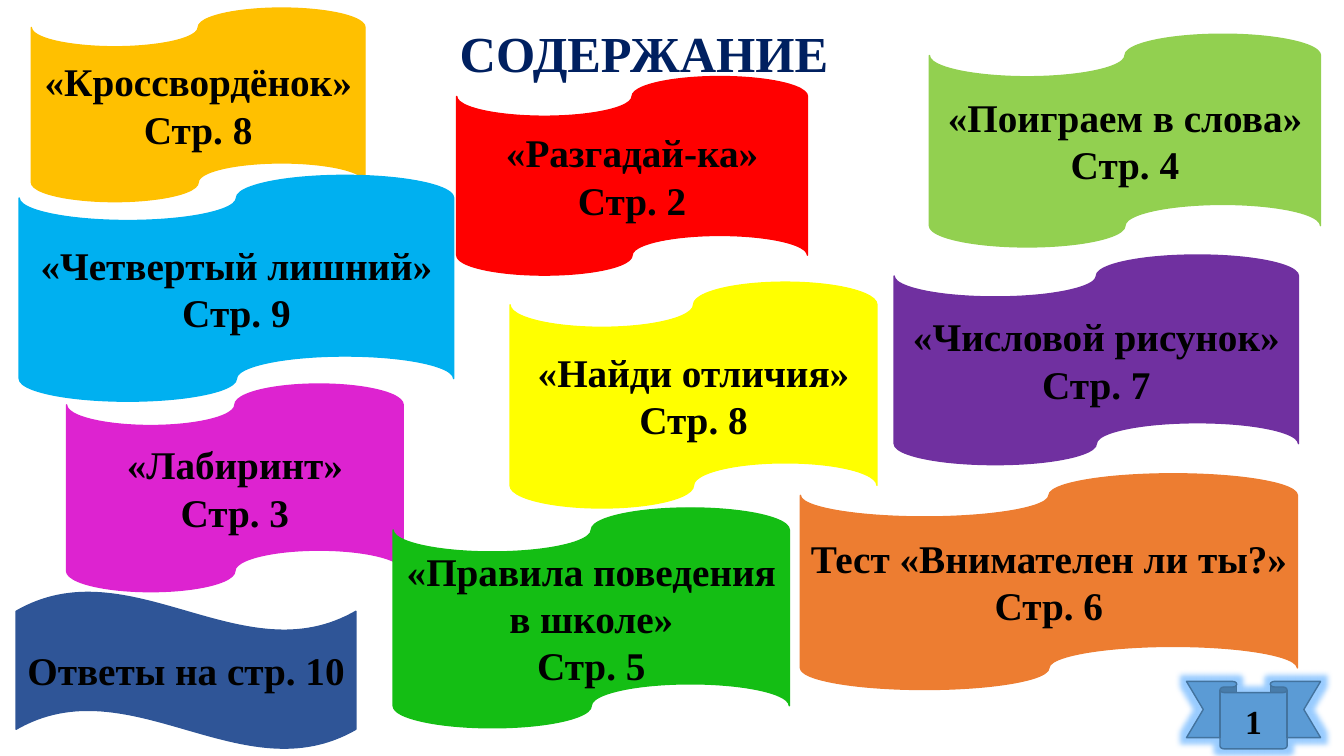
from dataclasses import dataclass

import pptx
import pptx.dml.color
import pptx.enum.shapes
import pptx.enum.text
import pptx.oxml
import pptx.oxml.ns
import pptx.presentation
import pptx.shapes.autoshape
import pptx.shapes.base
import pptx.slide
import pptx.text.text
import pptx.util

SHAPE = pptx.enum.shapes.MSO_SHAPE
ALIGN = pptx.enum.text.PP_ALIGN
ANCHOR = pptx.enum.text.MSO_ANCHOR


@dataclass(frozen=True)
class Theme:
    font: str = "Times New Roman"
    title_size: int = 36
    banner_size: int = 28
    page_size: int = 24
    line_width: int = 1
    glow_radius: int = 8
    text: str = "000000"
    title: str = "002060"
    amber: str = "FFC000"
    red: str = "FF0000"
    lime: str = "92D050"
    magenta: str = "DD23D0"
    green: str = "14BE14"
    orange: str = "ED7D31"
    purple: str = "7030A0"
    yellow: str = "FFFF00"
    sky: str = "00B0F0"
    navy: str = "2F5597"
    ribbon: str = "5B9BD5"
    ribbon_edge: str = "43739E"
    glow: str = "99CCFF"


THEME = Theme()


@dataclass(frozen=True)
class Area:
    """A rectangle in percent of the slide's width and height."""
    left: float
    top: float
    width: float
    height: float


@dataclass(frozen=True)
class Banner:
    text: str
    area: Area
    color: str
    preset: SHAPE = SHAPE.FLOWCHART_PUNCHED_TAPE


TITLE_AREA = Area(33.45, 2.27, 30.3, 9.47)
PAGE_AREA = Area(88.28, 90.13, 9.98, 8.93)
BANNERS = [
    Banner("«Кроссвордёнок»\nСтр. 8", Area(2.33, 1.07, 24.83, 25.6), THEME.amber),
    Banner("«Разгадай-ка»\nСтр. 2", Area(33.98, 10.13, 26.1, 26.27), THEME.red),
    Banner("«Поиграем в слова»\nСтр. 4", Area(69.15, 4.53, 29.1, 28.13), THEME.lime),
    Banner("«Лабиринт»\nСтр. 3", Area(4.95, 50.8, 25.05, 27.47), THEME.magenta),
    Banner("«Правила поведения в школе»\nСтр. 5", Area(29.25, 67.2, 29.48, 29.07), THEME.green),
    Banner("Тест «Внимателен ли ты?»\nСтр. 6", Area(59.55, 62.67, 36.98, 28.53), THEME.orange),
    Banner("«Числовой рисунок»\nСтр. 7", Area(66.53, 33.73, 30.08, 27.73), THEME.purple),
    Banner("«Найди отличия»\nСтр. 8", Area(37.95, 37.33, 27.3, 29.87), THEME.yellow),
    Banner("«Четвертый лишний»\nСтр. 9", Area(1.43, 23.2, 32.33, 29.87), THEME.sky),
    Banner("Ответы на стр. 10", Area(1.2, 78.27, 25.28, 20.8), THEME.navy, SHAPE.WAVE),
]


def rgb(color: str) -> pptx.dml.color.RGBColor:
    return pptx.dml.color.RGBColor.from_string(color)


def place(shape: pptx.shapes.base.BaseShape, area: Area,
          deck: pptx.presentation.Presentation) -> None:
    shape.left = round(deck.slide_width * area.left / 100)
    shape.top = round(deck.slide_height * area.top / 100)
    shape.width = round(deck.slide_width * area.width / 100)
    shape.height = round(deck.slide_height * area.height / 100)


def write(frame: pptx.text.text.TextFrame, text: str, size: int,
          color: str, align: ALIGN) -> None:
    frame.text = text
    frame.word_wrap = True
    for para in frame.paragraphs:
        para.alignment = align
        para.line_spacing = 1.0
        for span in para.runs:
            span.font.name = THEME.font
            span.font.size = pptx.util.Pt(size)
            span.font.bold = True
            span.font.color.rgb = rgb(color)


def draw_banner(deck: pptx.presentation.Presentation, page: pptx.slide.Slide,
                banner: Banner, size: int, edge: str) -> pptx.shapes.autoshape.Shape:
    box = page.shapes.add_shape(banner.preset, 0, 0, 0, 0)
    place(box, banner.area, deck)
    box.shadow.inherit = False
    box.fill.solid()
    box.fill.fore_color.rgb = rgb(banner.color)
    box.line.color.rgb = rgb(edge)
    box.line.width = pptx.util.Pt(THEME.line_width)
    box.text_frame.vertical_anchor = ANCHOR.MIDDLE
    write(box.text_frame, banner.text, size, THEME.text, ALIGN.CENTER)
    return box


def add_glow(box: pptx.shapes.autoshape.Shape) -> None:
    effects = box._element.spPr.find(pptx.oxml.ns.qn("a:effectLst"))
    radius = pptx.util.Pt(THEME.glow_radius)
    effects.append(pptx.oxml.parse_xml(
        f'<a:glow {pptx.oxml.ns.nsdecls("a")} rad="{radius}">'
        f'<a:srgbClr val="{THEME.glow}"/></a:glow>'))


def main() -> None:
    deck = pptx.Presentation()
    deck.slide_width = pptx.util.Inches(13.33)
    deck.slide_height = pptx.util.Inches(7.5)
    page = deck.slides.add_slide(deck.slide_layouts.get_by_name("Title Only"))

    title = page.shapes.title
    place(title, TITLE_AREA, deck)
    title.text_frame.vertical_anchor = ANCHOR.TOP
    title.text_frame.auto_size = pptx.enum.text.MSO_AUTO_SIZE.SHAPE_TO_FIT_TEXT
    write(title.text_frame, "СОДЕРЖАНИЕ", THEME.title_size, THEME.title, ALIGN.LEFT)

    for banner in BANNERS:
        draw_banner(deck, page, banner, THEME.banner_size, banner.color)

    page_mark = Banner("1", PAGE_AREA, THEME.ribbon, SHAPE.DOWN_RIBBON)
    add_glow(draw_banner(deck, page, page_mark, THEME.page_size, THEME.ribbon_edge))

    deck.save("out.pptx")


if __name__ == "__main__":
    main()
